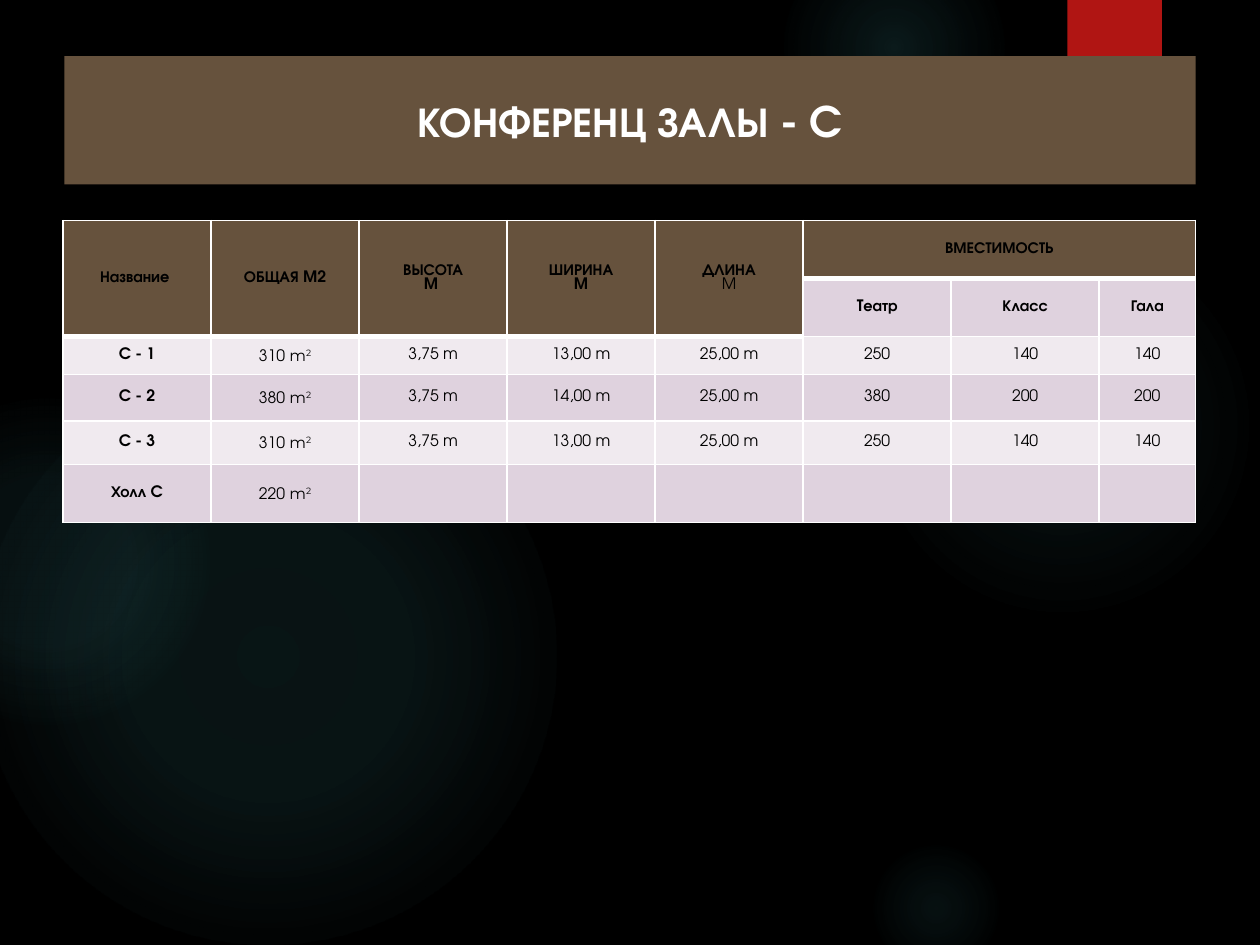
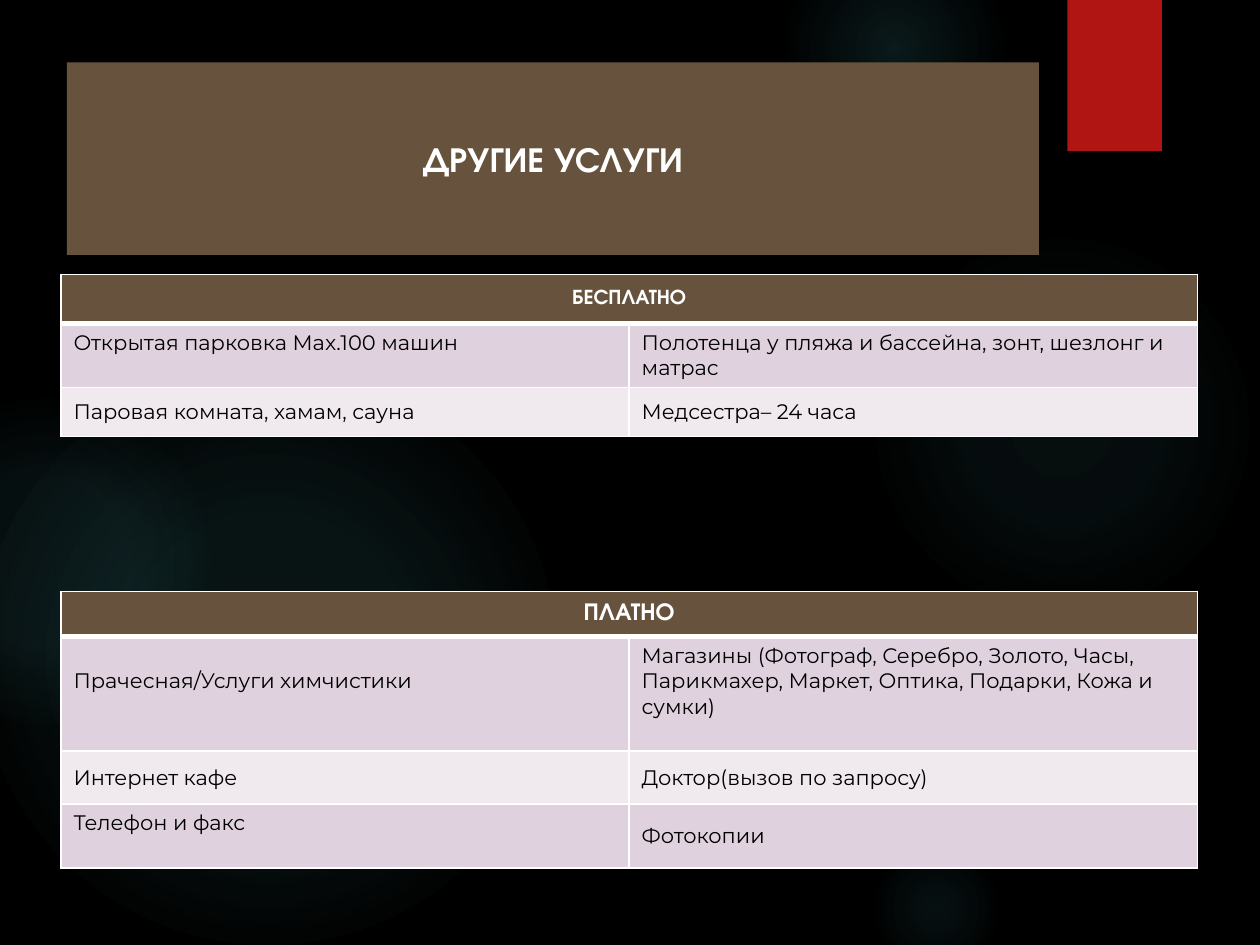
from pptx import Presentation
from pptx.dml.color import RGBColor
from pptx.enum import shapes, text
from pptx.oxml import parse_xml
from pptx.util import Pt

COLORS = {"black": "000000", "white": "FFFFFF", "brown": "66523D", "red": "B01513",
          "glow": "50B9C1", "mauve": "DFD2DE", "pale": "F0EAEF"}
DISPLAY, BODY = "TeX Gyre Adventor", "Montserrat"
NAMESPACE = 'xmlns:a="http://schemas.openxmlformats.org/drawingml/2006/main"'
CENTER, LEFT = text.PP_ALIGN.CENTER, text.PP_ALIGN.LEFT
MIDDLE, TOP = text.MSO_ANCHOR.MIDDLE, text.MSO_ANCHOR.TOP

# Background glows: left, top, diameter, (position %, opacity %) stops
GLOWS = [
    (496, 132, 222, ((0, 7), (36, 6), (69, 0))),
    (448, -36, 126, ((0, 14), (36, 7), (73, 0))),
    (496, 480, 78, ((0, 9), (36, 5), (66, 0))),
    (-12, 210, 330, ((0, 11), (36, 10), (75, 0))),
    (-66, 228, 186, ((0, 8), (36, 8), (72, 0))),
]


def rgb(name):
    return RGBColor.from_string(COLORS[name])


def add_span(para, words, size, font=DISPLAY, color="black", bold=False, raised=False):
    span = para.add_run()
    span.text = words
    span.font.size = Pt(size)
    span.font.name = font
    span.font.bold = bold
    span.font.color.rgb = rgb(color)
    if raised:
        span.font._element.set("baseline", "30000")


def add_plain_shape(page, kind, box, color):
    shape = page.shapes.add_shape(kind, *map(Pt, box))
    shape.shadow.inherit = False
    shape.fill.solid()
    shape.fill.fore_color.rgb = rgb(color)
    shape.line.fill.background()
    return shape


# Backdrop shared by both slides
def add_glow(page, left, top, diameter, stops):
    glow = add_plain_shape(page, shapes.MSO_SHAPE.OVAL, (left, top, diameter, diameter), "glow")
    stop_xml = "".join(
        f'<a:gs pos="{position * 1000}"><a:srgbClr val="{COLORS["glow"]}">'
        f'<a:alpha val="{opacity * 1000}"/></a:srgbClr></a:gs>' for position, opacity in stops)
    gradient = parse_xml(
        f'<a:gradFill {NAMESPACE} rotWithShape="1"><a:gsLst>{stop_xml}</a:gsLst><a:path path="circle">'
        '<a:fillToRect l="50000" t="50000" r="50000" b="50000"/></a:path></a:gradFill>')
    properties = glow._element.spPr
    properties.replace(properties.find("{*}solidFill"), gradient)


def add_backdrop(page):
    page.background.fill.solid()
    page.background.fill.fore_color.rgb = rgb("black")
    for glow in GLOWS:
        add_glow(page, *glow)
    tab = add_plain_shape(page, shapes.MSO_SHAPE.RECTANGLE, (610, 0, 54, 86.4), "red")
    properties = tab._element.spPr
    properties.replace(properties.find("{*}effectLst"), parse_xml(
        f'<a:effectLst {NAMESPACE}><a:outerShdw blurRad="{Pt(3)}" dist="{Pt(2)}" dir="5400000">'
        f'<a:srgbClr val="{COLORS["black"]}"><a:alpha val="45000"/></a:srgbClr>'
        '</a:outerShdw></a:effectLst>'))


def add_title(page, box, words, size):
    band = add_plain_shape(page, shapes.MSO_SHAPE.RECTANGLE, box, "brown")
    band.text_frame.word_wrap = True
    band.text_frame.vertical_anchor = MIDDLE
    para = band.text_frame.paragraphs[0]
    para.alignment = CENTER
    add_span(para, words, size, color="white", bold=True)


# Tables
def style_cell(cell, color, top=1, bottom=1):
    properties = cell._tc.get_or_add_tcPr()
    for side, width in (("L", 1), ("R", 1), ("T", top), ("B", bottom)):
        properties.append(parse_xml(
            f'<a:ln{side} {NAMESPACE} w="{Pt(width)}"><a:solidFill>'
            f'<a:srgbClr val="{COLORS["white"]}"/></a:solidFill></a:ln{side}>'))
    cell.fill.solid()
    cell.fill.fore_color.rgb = rgb(color)
    cell.vertical_anchor = MIDDLE


def add_grid(page, left, top, widths, heights):
    frame = page.shapes.add_table(len(heights), len(widths), Pt(left), Pt(top),
                                  Pt(sum(widths)), Pt(sum(heights)))
    grid = frame.table
    grid.first_row = grid.horz_banding = False
    for column, width in zip(grid.columns, widths):
        column.width = Pt(width)
    for row, height in zip(grid.rows, heights):
        row.height = Pt(height)
    return grid


def first_para(cell, alignment):
    para = cell.text_frame.paragraphs[0]
    para.alignment = alignment
    return para


def add_hall_table(page, left, top):
    headings = [["Название "], ["ОБЩАЯ M2"], ["ВЫСОТА", "M "], ["ШИРИНА", "M"], ["ДЛИНА", "M"]]
    layouts = ["Tеатр", "Класс", "Гала"]
    halls = [
        ["C - 1", "310 ", "3,75 m", "13,00 m", "25,00 m", "250", "140", "140"],
        ["C - 2", "380 ", "3,75 m", "14,00 m", "25,00 m", "380", "200", "200"],
        ["C - 3", "310 ", "3,75 m", "13,00 m", "25,00 m", "250", "140", "140"],
        ["Холл C", "220 "],
    ]
    grid = add_grid(page, left, top, [84.6] * 7 + [55], [33.1, 33.1, 21.8, 26.5, 25, 33.1])
    first_layout = len(headings)

    # Fills and borders; the header is two rows deep except above the layouts
    for row in range(len(grid.rows)):
        for column in range(len(grid.columns)):
            depth = 2 if column < first_layout else 1
            cell = grid.cell(row, column)
            color = "brown" if row < depth else ("pale", "mauve")[row % 2]
            style_cell(cell, color, 3 if row == depth else 1, 3 if row < depth else 1)
            cell.margin_left = cell.margin_right = Pt(2)
            cell.margin_top = cell.margin_bottom = 0

    # Header
    for column, lines in enumerate(headings):
        cell = grid.cell(0, column)
        cell.merge(grid.cell(1, column))
        for index, line in enumerate(lines):
            para = cell.text_frame.add_paragraph() if index else first_para(cell, CENTER)
            para.alignment = CENTER
            add_span(para, line, 9, bold=not (index and lines[0] == "ДЛИНА"))
    capacity = grid.cell(0, first_layout)
    capacity.merge(grid.cell(0, len(grid.columns) - 1))
    add_span(first_para(capacity, CENTER), "ВМЕСТИМОСТЬ", 9, bold=True)
    for column, layout in enumerate(layouts, first_layout):
        add_span(first_para(grid.cell(1, column), CENTER), layout, 9, bold=True)

    # Halls
    for row, values in enumerate(halls, 2):
        for column, value in enumerate(values):
            para = first_para(grid.cell(row, column), CENTER)
            add_span(para, value, 9, bold=column == 0)
            if column == 1:
                add_span(para, "m", 9, BODY)
                add_span(para, "2", 9, BODY, raised=True)


def add_service_table(page, left, top, heading, size, heights, services, top_cells=(), raised_cells=()):
    grid = add_grid(page, left, top, [324.7] * 2, heights)
    for column in range(2):
        style_cell(grid.cell(0, column), "brown", bottom=3)
    header = grid.cell(0, 0)
    header.merge(grid.cell(0, 1))
    add_span(first_para(header, CENTER), heading, size, color="white", bold=True)
    for row, pair in enumerate(services, 1):
        for column, service in enumerate(pair):
            cell = grid.cell(row, column)
            style_cell(cell, ("pale", "mauve")[row % 2], top=3 if row == 1 else 1)
            if (row, column) in top_cells:
                cell.vertical_anchor = TOP
            if (row, column) in raised_cells:
                cell.margin_bottom = Pt(18)
            add_span(first_para(cell, LEFT), service, 12, BODY)


# Slides
def add_halls_page(page):
    add_backdrop(page)
    add_title(page, (36.8, 32, 646.5, 73.4), "КОНФЕРЕНЦ ЗАЛЫ - C", 24)
    add_hall_table(page, 36, 126)


def add_services_page(page):
    add_backdrop(page)
    add_title(page, (38.2, 35.7, 555.5, 110), "ДРУГИЕ УСЛУГИ", 20)
    add_service_table(page, 34.8, 156.8, "БЕСПЛАТНО", 12, [28, 36.6, 28.2], [
        ("Открытая парковка Max.100 машин", "Полотенца у пляжа и бассейна, зонт, шезлонг и матрас"),
        ("Паровая комната, хамам, сауна", "Медсестра– 24 часа"),
    ], top_cells=[(1, 0)])
    add_service_table(page, 34.8, 338, "ПЛАТНО", 14, [25.8, 65.5, 30.2, 36.5], [
        ("Прачесная/Услуги химчистики",
         "Магазины (Фотограф, Серебро, Золото, Часы, Парикмахер, Маркет, Оптика, Подарки, Кожа и сумки)"),
        ("Интернет кафе", "Доктор(вызов по запросу)"),
        ("Телефон и факс", "Фотокопии"),
    ], top_cells=[(1, 1), (3, 0)], raised_cells=[(1, 0)])


def main():
    deck = Presentation()
    deck.slide_width, deck.slide_height = Pt(720), Pt(540)
    for build_page in (add_halls_page, add_services_page):
        build_page(deck.slides.add_slide(deck.slide_layouts[6]))
    deck.save("out.pptx")


if __name__ == "__main__":
    main()
